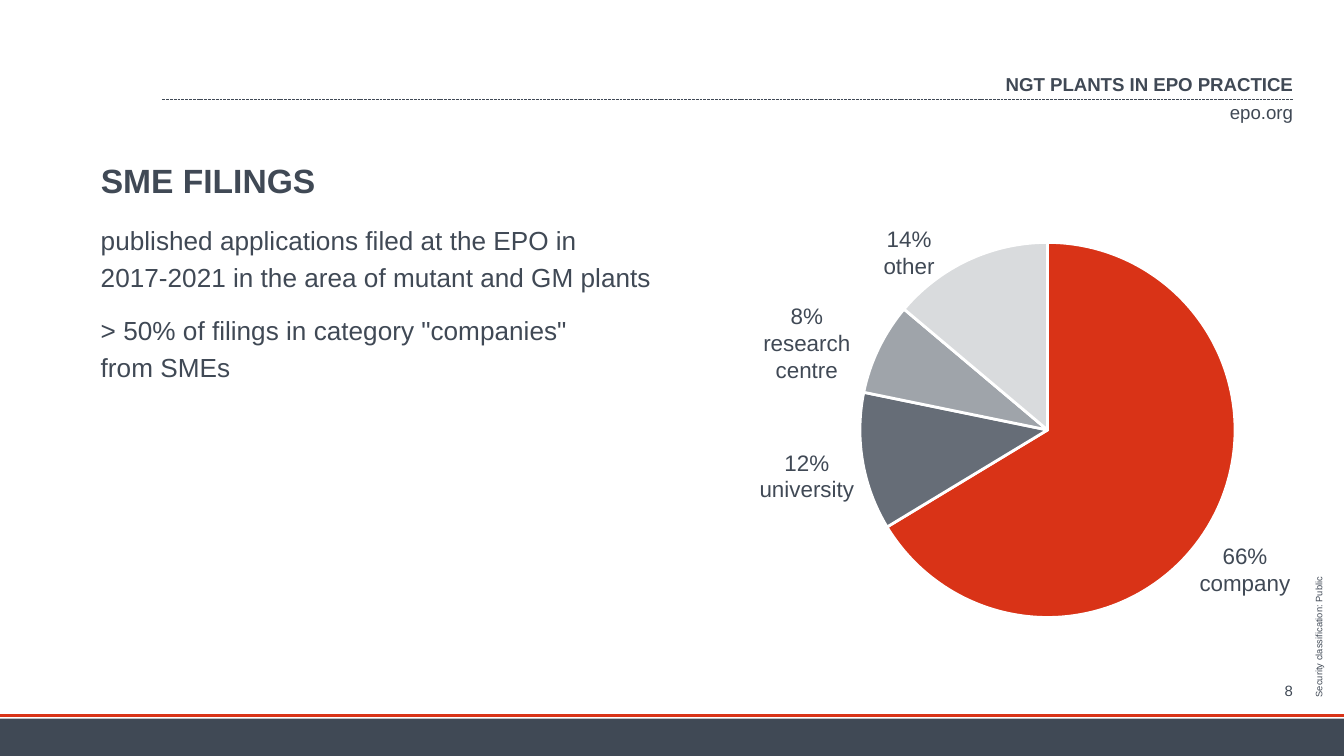
from dataclasses import dataclass

from lxml.etree import SubElement
from pptx import Presentation
from pptx.chart.data import CategoryChartData
from pptx.dml.color import RGBColor
from pptx.enum.chart import XL_CHART_TYPE
from pptx.enum.dml import MSO_LINE
from pptx.enum.shapes import MSO_CONNECTOR, MSO_SHAPE
from pptx.enum.text import MSO_ANCHOR, PP_ALIGN
from pptx.oxml.ns import qn
from pptx.util import Pt

FONT = "Arial"
INK = "404955"
RED = "D93317"
WHITE = "FFFFFF"
WIDE, HIGH = 720, 405
LEFT, RIGHT = 54, 692.6
PIE_W, PIE_H, PIE_SIZE = 296, 222, 201


@dataclass
class Note:
    text: str
    x: float
    y: float
    w: float
    h: float
    size: float = 12
    align: PP_ALIGN = PP_ALIGN.CENTER
    anchor: MSO_ANCHOR = MSO_ANCHOR.MIDDLE
    bold: bool = False
    turn: float = 0


@dataclass
class Slice:
    value: float
    color: str


NOTES = [
    Note("epo.org", RIGHT - 60, 54, 60, 12.2, 10, PP_ALIGN.RIGHT),
    Note("NGT PLANTS IN EPO PRACTICE", RIGHT - 425, 38.3, 425, 13, 10,
         PP_ALIGN.RIGHT, bold=True),
    Note("8", RIGHT - 42, 365.2, 42, 9.4, 8, PP_ALIGN.RIGHT),
    Note("Security classification: Public", 674, 338.2, 64.8, 6, 5,
         PP_ALIGN.LEFT, MSO_ANCHOR.TOP, turn=270),
    Note("66%\ncompany", 627, 289.6, 80, 31),
    Note("14%\nother", 457, 119.6, 60, 31),
    Note("8%\nresearch centre", 396.5, 168, 71.5, 31),
    Note("12%\nuniversity", 393, 239.3, 78.5, 31),
]

BODY = [
    "published applications filed at the EPO in\n"
    "2017-2021 in the area of mutant and GM plants",
    "> 50% of filings in category \"companies\"\nfrom SMEs",
]

SLICES = [Slice(67, RED), Slice(12, "666D77"),
          Slice(8, "9FA4AA"), Slice(14, "D9DBDD")]


def paint(target, color: str) -> None:
    """Set a solid colour on a fill."""
    target.solid()
    target.fore_color.rgb = RGBColor.from_string(color)


def style(font, size: float, bold: bool = False) -> None:
    font.name, font.size, font.bold = FONT, Pt(size), bold
    paint(font.fill, INK)


def place(shape, x: float, y: float, w: float, h: float) -> None:
    shape.left, shape.top = Pt(x), Pt(y)
    shape.width, shape.height = Pt(w), Pt(h)


def frame(shape, anchor: MSO_ANCHOR):
    """Give a shape's text zero insets, wrapping and an anchor."""
    box = shape.text_frame
    box.margin_left = box.margin_right = Pt(0)
    box.margin_top = box.margin_bottom = Pt(0)
    box.word_wrap, box.vertical_anchor = True, anchor
    return box


def write(par, text: str, size: float, bold: bool = False) -> None:
    """Add one run for each line of the text."""
    for i, line in enumerate(text.split("\n")):
        if i:
            par.add_line_break()
        run = par.add_run()
        run.text = line
        style(run.font, size, bold)


def add_note(slide, note: Note) -> None:
    shape = slide.shapes.add_textbox(
        Pt(note.x), Pt(note.y), Pt(note.w), Pt(note.h))
    shape.rotation = note.turn
    par = frame(shape, note.anchor).paragraphs[0]
    par.alignment = note.align
    write(par, note.text, note.size, note.bold)


def add_rule(slide, x: float, end: float, y: float, color: str, width: float):
    rule = slide.shapes.add_connector(
        MSO_CONNECTOR.STRAIGHT, Pt(x), Pt(y), Pt(end), Pt(y))
    paint(rule.line.fill, color)
    rule.line.width = Pt(width)
    SubElement(rule._element.spPr, qn("a:effectLst"))
    return rule


def add_title(slide) -> None:
    title = slide.shapes.title
    place(title, LEFT, 63.4, RIGHT - LEFT, 44)
    par = frame(title, MSO_ANCHOR.BOTTOM).paragraphs[0]
    par.alignment = PP_ALIGN.LEFT
    write(par, "SME FILINGS", 18, True)


def add_body(slide) -> None:
    shape = slide.shapes.add_textbox(Pt(LEFT), Pt(116.6), Pt(333.4), Pt(245))
    box = frame(shape, MSO_ANCHOR.TOP)
    for i, text in enumerate(BODY):
        par = box.add_paragraph() if i else box.paragraphs[0]
        par.line_spacing = 1.2
        par.space_before = Pt(8 if i else 0)
        write(par, text, 14)


def add_pie(slide) -> None:
    data = CategoryChartData()
    data.categories = [str(i + 1) for i in range(len(SLICES))]
    data.add_series("Series 1", [s.value for s in SLICES])
    chart = slide.shapes.add_chart(
        XL_CHART_TYPE.PIE, Pt(413.2), Pt(119.4), Pt(PIE_W), Pt(PIE_H),
        data).chart
    chart.has_legend = chart.has_title = False
    style(chart.font, 10)
    plot = chart.plots[0]
    plot.vary_by_categories = True
    for i, part in enumerate(SLICES):
        form = plot.series[0].points[i].format
        paint(form.fill, part.color)
        paint(form.line.fill, WHITE)
        form.line.width = Pt(1.5)
    fix_plot(chart)


def fix_plot(chart) -> None:
    """Centre the pie in the chart at its set size."""
    area = chart._chartSpace.chart.plotArea
    for old in area.findall(qn("c:layout")):
        area.remove(old)
    layout = SubElement(area, qn("c:layout"))
    area.insert(0, layout)
    manual = SubElement(layout, qn("c:manualLayout"))
    w, h = PIE_SIZE / PIE_W, PIE_SIZE / PIE_H
    for tag, val in [("layoutTarget", "inner"), ("xMode", "edge"),
                     ("yMode", "edge"), ("x", (1 - w) / 2),
                     ("y", (1 - h) / 2), ("w", w), ("h", h)]:
        SubElement(manual, qn(f"c:{tag}")).set("val", str(val))


def main() -> None:
    deck = Presentation()
    deck.slide_width, deck.slide_height = Pt(WIDE), Pt(HIGH)
    slide = deck.slides.add_slide(deck.slide_layouts[5])
    paint(slide.background.fill, WHITE)

    top = add_rule(slide, 87, RIGHT, 53.2, INK, 0.5)
    top.line.dash_style = MSO_LINE.SQUARE_DOT
    band = slide.shapes.add_shape(
        MSO_SHAPE.RECTANGLE, Pt(0), Pt(385), Pt(WIDE), Pt(HIGH - 385))
    band.shadow.inherit = False
    paint(band.fill, INK)
    band.line.fill.background()
    add_rule(slide, 0, WIDE, 383.2, RED, 1.5)

    add_title(slide)
    add_body(slide)
    add_pie(slide)
    for note in NOTES:
        add_note(slide, note)
    deck.save("out.pptx")


if __name__ == "__main__":
    main()
